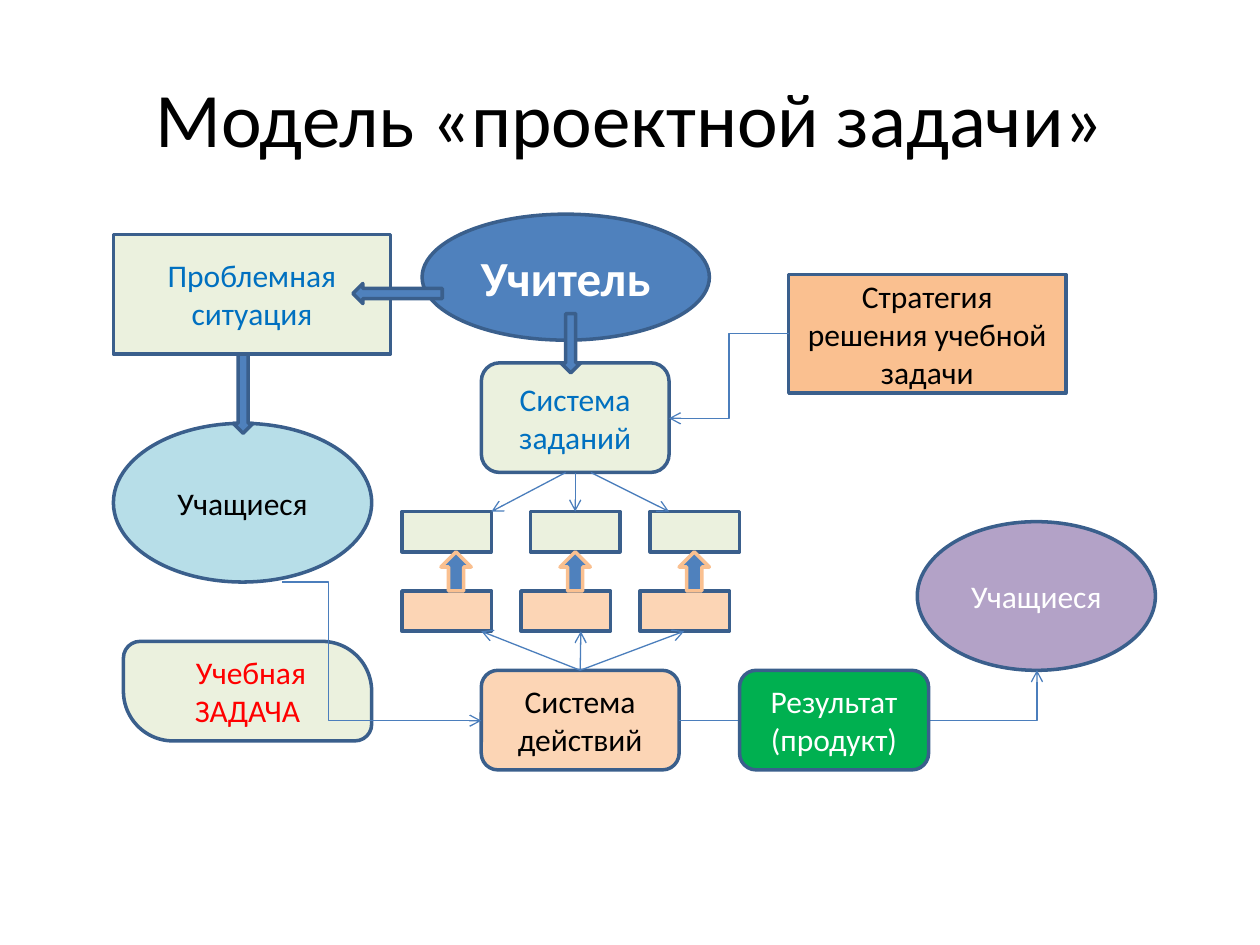
from lxml import etree
from pptx import Presentation
from pptx.dml.color import RGBColor
from pptx.enum.shapes import MSO_CONNECTOR, MSO_SHAPE
from pptx.enum.text import MSO_ANCHOR, PP_ALIGN
from pptx.oxml.ns import qn
from pptx.util import Inches, Pt

BLUE, OUTLINE, WIRE = "4F81BD", "3A5F8C", "4B7EBC"
GREEN, PEACH, ORANGE = "EBF1DE", "FCD5B5", "FAC090"
BLACK, WHITE, TEXT_BLUE = "000000", "FFFFFF", "0070C0"
CARD_WIDTH, CARD_HEIGHT = 0.71, 0.32


def color(value):
    return RGBColor.from_string(value)


def write(shape, lines, text_color, size=18, bold=False):
    frame = shape.text_frame
    for name, value in {"word_wrap": True, "vertical_anchor": MSO_ANCHOR.MIDDLE}.items():
        setattr(frame, name, value)
    look = {"name": "Calibri", "size": Pt(size), "bold": bold}
    for index, line in enumerate(lines):
        para = frame.add_paragraph() if index else frame.paragraphs[0]
        para.alignment = PP_ALIGN.CENTER
        span = para.add_run()
        span.text = line
        for name, value in look.items():
            setattr(span.font, name, value)
        span.font.color.rgb = color(text_color)


def add_node(page, kind, box, fill, outline=OUTLINE):
    shape = page.shapes.add_shape(kind, *map(Inches, box))
    shape.shadow.inherit = False
    shape.fill.solid()
    shape.fill.fore_color.rgb = color(fill)
    shape.line.color.rgb = color(outline)
    shape.line.width = Pt(2)
    return shape


def add_wire(page, start, end, kind=MSO_CONNECTOR.STRAIGHT):
    wire = page.shapes.add_connector(kind, *map(Inches, (*start, *end)))
    wire.line.color.rgb = color(WIRE)
    wire.line.width = Pt(0.75)
    etree.SubElement(wire.line._get_or_add_ln(), qn("a:tailEnd"), type="arrow")
    etree.SubElement(wire._element.spPr, qn("a:effectLst"))
    return wire


def draw_title(page, box):
    title = page.shapes.add_textbox(*map(Inches, box))
    write(title, ["Модель «проектной задачи»"], BLACK, 44)


def draw_tasks(page, box):
    left, top, width, height = box
    teacher = add_node(page, MSO_SHAPE.OVAL, (left + 0.16, top, 2.28, 1), BLUE)
    write(teacher, ["Учитель"], WHITE, 28, True)
    tasks = add_node(page, MSO_SHAPE.ROUNDED_RECTANGLE,
                     (left + 0.63, top + 1.18, 1.49, 0.87), GREEN)
    write(tasks, ["Система", "заданий"], TEXT_BLUE)
    add_node(page, MSO_SHAPE.DOWN_ARROW, (left + 1.26, top + 0.79, 0.16, 0.47), BLUE)
    card_top = top + height - CARD_HEIGHT
    cards = [add_node(page, MSO_SHAPE.RECTANGLE,
                      (left + offset, card_top, CARD_WIDTH, CARD_HEIGHT), GREEN)
             for offset in (0, 1.02, 1.97)]
    wire_top = top + 2.05
    for start, end in ((1.3, 0.71), (1.5, 2.12)):
        add_wire(page, (left + start, wire_top), (left + end, card_top))
    middle = add_wire(page, (left + 1.38, wire_top), (left + 1.38, card_top))
    middle.begin_connect(tasks, 2)
    middle.end_connect(cards[1], 0)


def draw_learners(page, box):
    left, top, width, height = box
    situation = add_node(page, MSO_SHAPE.RECTANGLE, (left, top, 2.2, 0.95), GREEN)
    write(situation, ["Проблемная ситуация"], TEXT_BLUE)
    learners = add_node(page, MSO_SHAPE.OVAL, (left, top + 1.5, 2.05, 1.26), "B7DEE8")
    write(learners, ["Учащиеся"], BLACK)
    problem = add_node(page, MSO_SHAPE.ROUND_2_DIAG_RECTANGLE,
                       (left + 0.08, top + height - 0.79, 1.97, 0.79), GREEN)
    problem.adjustments[0], problem.adjustments[1] = 0.167, 0.5
    write(problem, [" Учебная", "ЗАДАЧА"], "FF0000")
    add_node(page, MSO_SHAPE.LEFT_ARROW, (left + 1.9, top + 0.39, 0.71, 0.16), BLUE)
    add_node(page, MSO_SHAPE.DOWN_ARROW, (left + 0.95, top + 0.95, 0.16, 0.63), BLUE)


def draw_actions(page, box):
    left, top, width, height = box
    actions_top = top + height - 0.79
    actions = add_node(page, MSO_SHAPE.ROUNDED_RECTANGLE,
                       (left + 1.58, actions_top, 1.57, 0.79), PEACH)
    write(actions, ["Система действий"], BLACK)
    card_top = top + 0.31
    for column, end in enumerate((1.58, 2.37, 3.19)):
        card_left = left + 0.95 + column * 0.945
        add_node(page, MSO_SHAPE.RECTANGLE,
                 (card_left, card_top, CARD_WIDTH, CARD_HEIGHT), PEACH)
        add_node(page, MSO_SHAPE.UP_ARROW,
                 (card_left + 0.31, top, 0.24, 0.31), BLUE, ORANGE)
        wire = add_wire(page, (left + 2.37, actions_top),
                        (left + end, card_top + CARD_HEIGHT))
        wire.begin_connect(actions, 0)
    elbow = add_wire(page, (left, top + 0.24), (left + 1.58, top + 1.34),
                     MSO_CONNECTOR.ELBOW)
    guides = elbow._element.spPr.prstGeom.get_or_add_avLst()
    etree.SubElement(guides, qn("a:gd"), name="adj1", fmla="val 23200")


def draw_outcome(page, box):
    left, top, width, height = box
    learners = add_node(page, MSO_SHAPE.OVAL,
                        (left + width - 1.89, top, 1.89, 1.18), "B3A2C7")
    write(learners, ["Учащиеся"], WHITE)
    elbow = add_wire(page, (left, top + 1.58), (left + width - 0.94, top + 1.18),
                     MSO_CONNECTOR.ELBOW)
    elbow._element.spPr.prstGeom.set("prst", "bentConnector2")
    result = add_node(page, MSO_SHAPE.ROUNDED_RECTANGLE,
                      (left + 0.48, top + height - 0.79, 1.5, 0.79), "00B050")
    write(result, ["Результат", "(продукт)"], WHITE)


def draw_strategy(page, box):
    left, top, width, height = box
    strategy = add_node(page, MSO_SHAPE.RECTANGLE,
                        (left + width - 2.2, top, 2.2, 0.94), ORANGE)
    write(strategy, ["Стратегия решения учебной задачи"], BLACK)
    add_wire(page, (left + width - 2.2, top + 0.47), (left, top + height),
             MSO_CONNECTOR.ELBOW)


def main():
    deck = Presentation()
    deck.slide_width, deck.slide_height = Inches(10), Inches(7.5)
    page = deck.slides.add_slide(deck.slide_layouts[6])
    draw_title(page, (0.5, 0.3, 9, 1.25))
    draw_tasks(page, (3.19, 1.7, 2.68, 2.68))
    draw_learners(page, (0.9, 1.86, 2.61, 4.02))
    draw_actions(page, (2.24, 4.38, 3.55, 1.73))
    draw_outcome(page, (5.39, 4.14, 3.78, 1.97))
    draw_strategy(page, (5.31, 2.18, 3.15, 1.14))
    deck.save("out.pptx")


if __name__ == "__main__":
    main()
